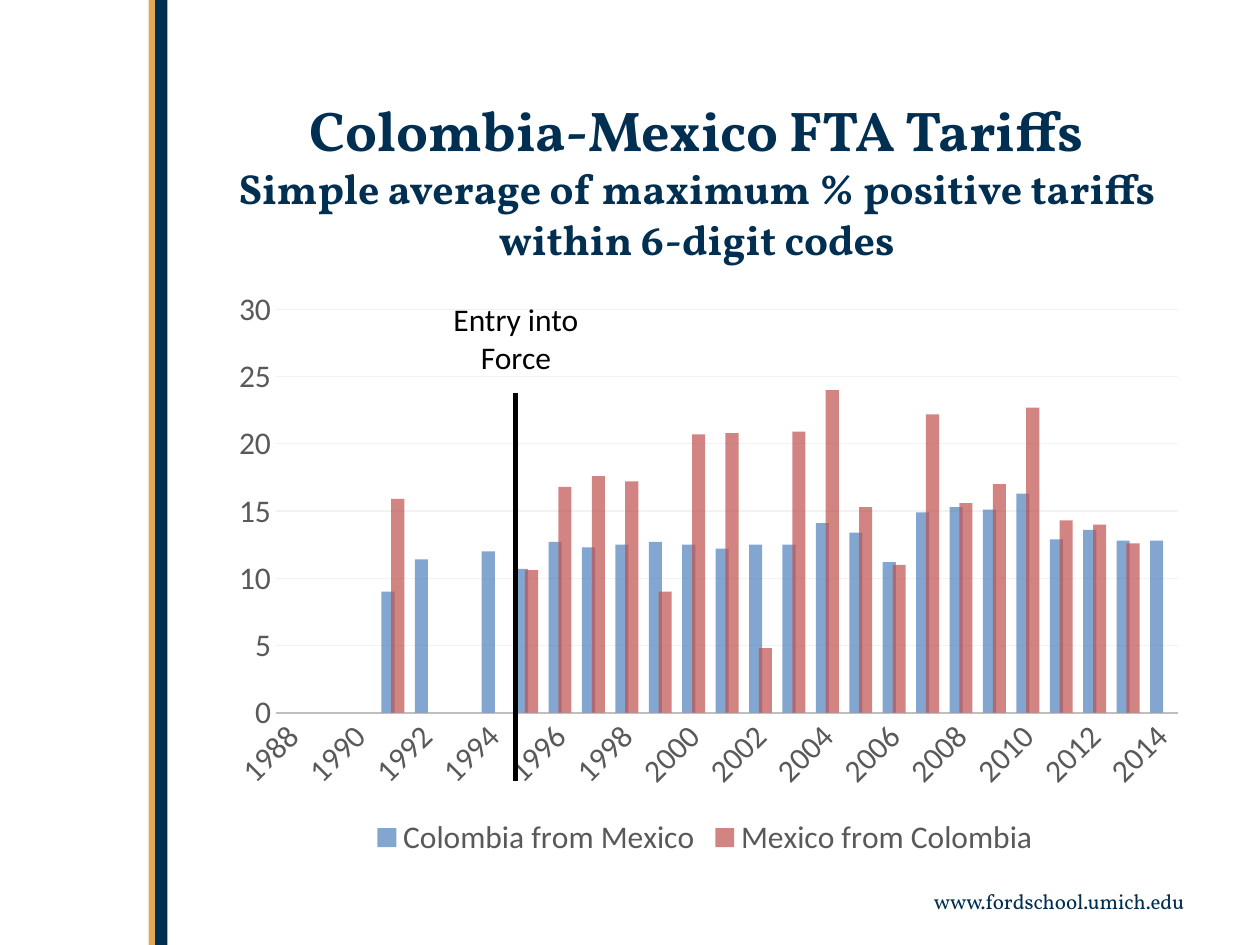
from pptx import Presentation
from pptx.chart.data import CategoryChartData
from pptx.dml.color import RGBColor
from pptx.enum.chart import XL_CHART_TYPE, XL_LEGEND_POSITION, XL_TICK_MARK
from pptx.enum.shapes import MSO_CONNECTOR, MSO_SHAPE
from pptx.enum.text import MSO_ANCHOR, PP_ALIGN
from pptx.oxml import parse_xml
from pptx.oxml.ns import nsdecls, qn
from pptx.util import Inches, Pt

COLUMNS = XL_CHART_TYPE.COLUMN_CLUSTERED
BOTTOM = XL_LEGEND_POSITION.BOTTOM
NO_TICK = XL_TICK_MARK.NONE
STRAIGHT = MSO_CONNECTOR.STRAIGHT
RECTANGLE = MSO_SHAPE.RECTANGLE
TOP = MSO_ANCHOR.TOP
CENTER, RIGHT = PP_ALIGN.CENTER, PP_ALIGN.RIGHT

WIDTH, HEIGHT = Inches(10), Inches(7.5)
HEADING_FONT, BODY_FONT = "Vollkorn", "Calibri"
COLORS = {
    "navy": "002F52", "gold": "E3A856", "black": "000000", "label": "595959",
    "axis": "BFBFBF", "grid": "F2F2F2", "blue": "4F81BD", "red": "C0504D",
}
YEARS = range(1988, 2015)
TARIFFS = {
    "Colombia from Mexico": ("blue", [
        None, None, None, 9, 11.4, None, 12, 10.7, 12.7, 12.3, 12.5, 12.7, 12.5, 12.2,
        12.5, 12.5, 14.1, 13.4, 11.2, 14.9, 15.3, 15.1, 16.3, 12.9, 13.6, 12.8, 12.8]),
    "Mexico from Colombia": ("red", [
        None, None, None, 15.9, None, None, None, 10.6, 16.8, 17.6, 17.2, 9, 20.7, 20.8,
        4.8, 20.9, 24, 15.3, 11, 22.2, 15.6, 17, 22.7, 14.3, 14, 12.6, None]),
}
PLOT_SHARES = {"x": 0.064, "y": 0.053, "w": 0.917, "h": 0.69}


def color(name):
    """Return the named palette colour."""
    return RGBColor.from_string(COLORS[name])


def set_font(font, size, color_name, family=BODY_FONT, bold=False):
    """Apply size, colour, family and weight to a font."""
    font.size, font.name, font.bold = Pt(size), family, bold
    font.color.rgb = color(color_name)


def add_band(slide, left, width, color_name):
    """Add a vertical band over the full slide height."""
    band = slide.shapes.add_shape(RECTANGLE, Inches(left), 0, Inches(width), HEIGHT)
    band.shadow.inherit = False
    band.fill.solid()
    band.fill.fore_color.rgb = color(color_name)
    band.line.fill.background()


def add_text(slide, box, lines, alignment, size, color_name, family=BODY_FONT, bold=False):
    """Add a one-paragraph text box from lines of text and own size."""
    frame = slide.shapes.add_textbox(*map(Inches, box)).text_frame
    frame.word_wrap = True
    frame.vertical_anchor = TOP
    paragraph = frame.paragraphs[0]
    paragraph.alignment = alignment
    set_font(paragraph.font, size, color_name, family, bold)
    for index, (text, own_size) in enumerate(lines):
        if index:
            paragraph.add_line_break()
        run = paragraph.add_run()
        run.text = text
        if own_size:
            run.font.size = Pt(own_size)


def add_marker(slide, x, top, bottom):
    """Add a thick vertical marker line."""
    marker = slide.shapes.add_connector(
        STRAIGHT, Inches(x), Inches(top), Inches(x), Inches(bottom))
    marker.line.color.rgb = color("black")
    marker.line.width = Pt(3)
    properties = marker._element.spPr
    properties.append(parse_xml(f"<a:effectLst {nsdecls('a')}/>"))


def style_axes(chart):
    """Style both axes and the gridlines."""
    years, percent = chart.category_axis, chart.value_axis
    for axis in (years, percent):
        axis.major_tick_mark = axis.minor_tick_mark = NO_TICK
        set_font(axis.tick_labels.font, 18, "label")
    years.format.line.color.rgb = color("axis")
    years.format.line.width = Pt(1.25)
    years._element.find(qn("c:txPr")).find(qn("a:bodyPr")).set("rot", "-2700000")
    percent.minimum_scale, percent.maximum_scale, percent.major_unit = 0, 30, 5
    percent.format.line.fill.background()
    gridline = percent.major_gridlines.format.line
    gridline.color.rgb = color("grid")
    gridline.width = Pt(0.75)


def place_plot(chart):
    """Fix the inner plot area as shares of the chart."""
    plot_area = chart._chartSpace.chart.plotArea
    for layout in plot_area.findall(qn("c:layout")):
        plot_area.remove(layout)
    shares = "".join(f'<c:{key} val="{share}"/>' for key, share in PLOT_SHARES.items())
    plot_area.insert(0, parse_xml(
        f"<c:layout {nsdecls('c')}><c:manualLayout><c:layoutTarget val=\"inner\"/>"
        f'<c:xMode val="edge"/><c:yMode val="edge"/>{shares}</c:manualLayout></c:layout>'))


def add_tariff_chart(slide, box):
    """Add the clustered column chart of tariffs by year."""
    data = CategoryChartData()
    data.categories = YEARS
    for name, (_, values) in TARIFFS.items():
        data.add_series(name, values)
    chart = slide.shapes.add_chart(COLUMNS, *map(Inches, box), data).chart
    set_font(chart.font, 10, "black")
    chart.has_title = False
    chart.has_legend = True
    chart.legend.position = BOTTOM
    chart.legend.include_in_layout = False
    set_font(chart.legend.font, 18, "label")
    plot = chart.plots[0]
    plot.gap_width, plot.overlap, plot.vary_by_categories = 80, 25, False
    for series, (color_name, _) in zip(plot.series, TARIFFS.values()):
        series.format.fill.solid()
        series.format.fill.fore_color.rgb = color(color_name)
        fill_color = next(series._element.iter(qn("a:srgbClr")))
        fill_color.append(parse_xml(f'<a:alpha {nsdecls("a")} val="70000"/>'))
    style_axes(chart)
    place_plot(chart)


def main():
    """Build and save the slide."""
    presentation = Presentation()
    presentation.slide_width, presentation.slide_height = WIDTH, HEIGHT
    slide = presentation.slides.add_slide(presentation.slide_layouts[6])
    add_band(slide, 1.23, 0.1, "navy")
    add_band(slide, 1.18, 0.05, "gold")
    add_text(slide, (7, 7, 2.5, 0.3), [("www.fordschool.umich.edu", None)],
             RIGHT, 12, "navy", HEADING_FONT)
    add_tariff_chart(slide, (1.69, 2.21, 7.81, 4.64))
    add_marker(slide, 4.09, 3.12, 6.2)
    add_text(slide, (3.23, 2.33, 1.73, 0.76), [("Entry into Force", None)],
             CENTER, 18, "black")
    add_text(slide, (1.57, 0.71, 7.92, 1.23), [
        ("Colombia-Mexico FTA Tariffs", 32),
        ("Simple average of maximum % positive tariffs", None),
        ("within 6-digit codes", None),
    ], CENTER, 24, "navy", HEADING_FONT, True)
    presentation.save("out.pptx")


if __name__ == "__main__":
    main()
